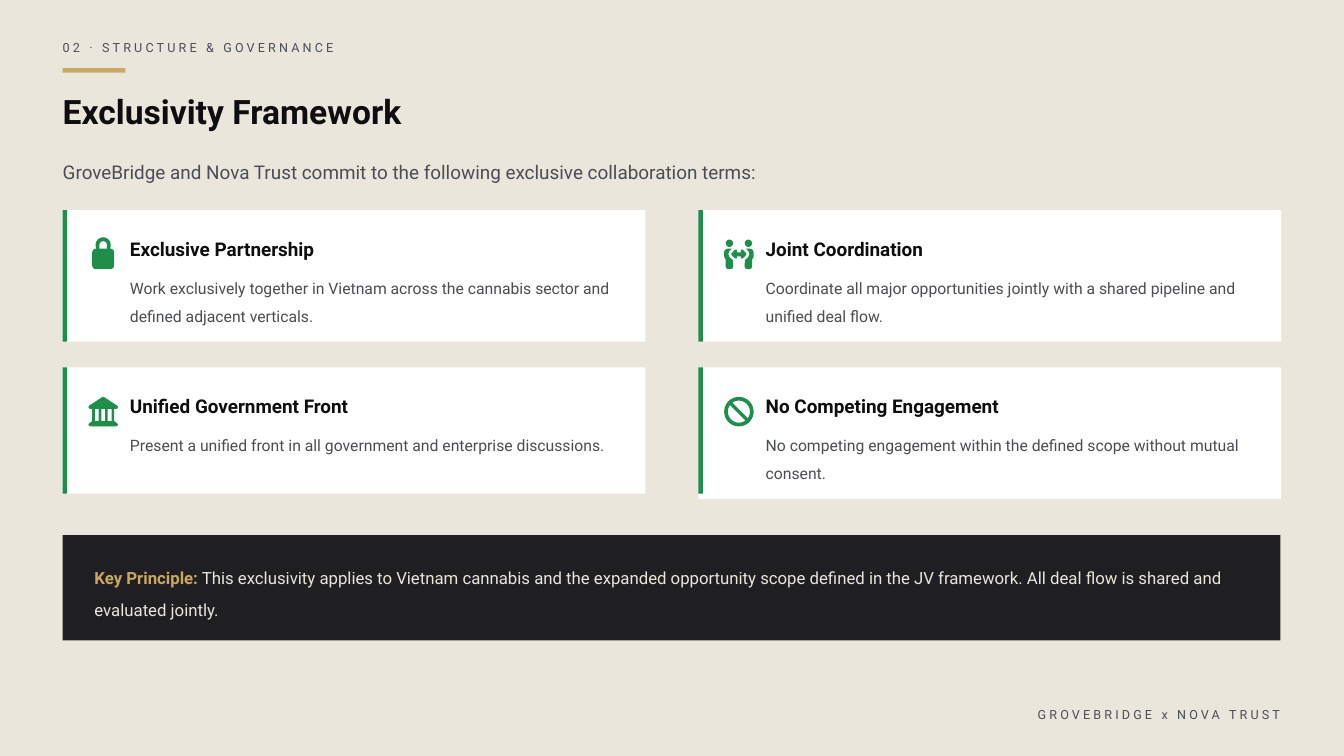
from dataclasses import dataclass
from math import cos, radians, sin

from pptx import Presentation
from pptx.dml.color import RGBColor
from pptx.enum.shapes import MSO_SHAPE
from pptx.enum.text import MSO_ANCHOR, PP_ALIGN
from pptx.util import Inches, Pt

RECT = MSO_SHAPE.RECTANGLE
TOP, MIDDLE = MSO_ANCHOR.TOP, MSO_ANCHOR.MIDDLE
LEFT, RIGHT = PP_ALIGN.LEFT, PP_ALIGN.RIGHT


@dataclass(frozen=True)
class Theme:
    font: str = "Roboto"
    sand: str = "EAE6DC"
    gold: str = "C9A961"
    green: str = "1F8E4A"
    ink: str = "0E0E10"
    gray: str = "4A4D54"
    dark: str = "1F1F22"
    white: str = "FFFFFF"
    label: int = 12
    body: int = 15
    note: int = 16
    lead: int = 18
    title: int = 32


THEME = Theme()
EDGE = 0.83
COLS = (EDGE, 9.24)
ROWS = (2.78, 4.86)
ICON = 39  # icon grid, in hundredths of an inch


def paint(shape, color):
    shape.shadow.inherit = False
    shape.fill.solid()
    shape.fill.fore_color.rgb = RGBColor.from_string(color)
    shape.line.fill.background()


def block(slide, x, y, w, h, color):
    paint(slide.shapes.add_shape(RECT, Inches(x), Inches(y), Inches(w), Inches(h)), color)


def text(slide, box, runs, size, lines=None, anchor=MIDDLE, wrap=False, align=LEFT, track=0):
    """Add a one-paragraph box; runs are (words, color, bold)."""
    frame = slide.shapes.add_textbox(*map(Inches, box)).text_frame
    frame.margin_left = frame.margin_right = frame.margin_top = frame.margin_bottom = 0
    frame.word_wrap = wrap
    frame.vertical_anchor = anchor
    para = frame.paragraphs[0]
    para.alignment = align
    if lines:
        para.line_spacing = lines
    for words, color, bold in runs:
        run = para.add_run()
        run.text = words
        font = run.font
        font.name, font.size, font.bold = THEME.font, Pt(size), bold
        font.color.rgb = RGBColor.from_string(color)
        if track:
            font._element.set("spc", str(track * 100))


def arc(x, y, r, start, end):
    """Points along an arc, clockwise, in degrees."""
    count = max(6, round((end - start) / 10))
    turns = [radians(start + (end - start) * i / count) for i in range(count + 1)]
    return [(x + r * cos(t), y + r * sin(t)) for t in turns]


def flip(points):
    return [(ICON - x, y) for x, y in reversed(points)]


def both(points):
    """Join a left half to its mirror image."""
    return points + flip(points)


def lock():
    body = (arc(19.5, 7, 10, 180, 360) + arc(29, 17, 5, 270, 360)
            + arc(29, 34, 5, 0, 90) + arc(10, 34, 5, 90, 180) + arc(10, 17, 5, 180, 270))
    hole = arc(19.5, 7, 5, 180, 360) + [(24.5, 12), (14.5, 12)]
    return [body, hole]


def people():
    head = arc(7, 4.75, 4.75, 0, 360)
    body = (arc(5, 17, 5, 180, 270) + [(10, 12), (7, 15), (5.5, 19), (7, 23), (11.5, 27)]
            + arc(8, 35, 4, 0, 90) + arc(6, 35, 4, 90, 180) + [(2, 26), (0.5, 24), (0, 22)])
    arrow = both([(17, 22), (17, 23.5), (16, 25), (14, 24.5), (10, 20.5),
                  (9.5, 19), (10, 18), (14, 13.5), (16, 13), (17, 14.5), (17, 17)])
    return [head, flip(head), body, flip(body), arrow]


def bank():
    front = both([(3, 39), (0.5, 38), (0, 36.5), (1, 35), (5, 32), (5, 16), (2.5, 16),
                  (0.5, 15), (0, 13.5), (1, 11.5), (18, 0.5), (19.5, 0)])
    gaps = [[(x, 16), (x + 5, 16), (x + 5, 32), (x, 32)] for x in (8.5, 17, 25.5)]
    return [front, *gaps]


def ban():
    mid = ICON / 2
    moons = [arc(mid, mid, 14.6, a, a + 163) for a in (53.5, 233.5)]
    return [arc(mid, mid, mid, 0, 360), *moons]


def icon(slide, x, y, loops):
    grid = [[(round(a * 100), round(b * 100)) for a, b in loop] for loop in loops]
    pen = slide.shapes.build_freeform(*grid[0][0], scale=Inches(1) / 10000)
    pen.add_line_segments(grid[0][1:], close=True)
    for loop in grid[1:]:
        pen.move_to(*loop[0])
        pen.add_line_segments(loop[1:], close=True)
    paint(pen.convert_to_shape(Inches(x), Inches(y)), THEME.green)


def card(slide, x, y, loops, name, words, high, bar):
    block(slide, x, y, 7.71, high, THEME.white)
    block(slide, x, y, 0.06, bar, THEME.green)
    icon(slide, x + 0.34, y + 0.39, loops)
    left = x + 0.89
    text(slide, (left, y + 0.3, 6.53, 0.42), [(name, THEME.ink, True)], THEME.lead)
    text(slide, (left, y + 0.78, 6.53, 0.9), [(words, THEME.gray, False)], THEME.body,
         lines=1.5, anchor=TOP, wrap=True)


def header(slide):
    text(slide, (EDGE, 0.49, 4.17, 0.28), [("02 · STRUCTURE & GOVERNANCE", THEME.gray, False)],
         THEME.label, track=3)
    block(slide, EDGE, 0.9, 0.83, 0.06, THEME.gold)
    text(slide, (EDGE, 1.11, 8.33, 0.62), [("Exclusivity Framework", THEME.ink, True)],
         THEME.title, lines=1.2)
    lead = "GroveBridge and Nova Trust commit to the following exclusive collaboration terms:"
    text(slide, (EDGE, 1.94, 9.72, 0.49), [(lead, THEME.gray, False)], THEME.lead, lines=1.6)


def footer(slide):
    block(slide, EDGE, 7.08, 16.11, 1.39, THEME.dark)
    rule = (" This exclusivity applies to Vietnam cannabis and the expanded opportunity scope "
            "defined in the JV framework. All deal flow is shared and evaluated jointly.")
    text(slide, (1.25, 7.29, 15.28, 0.97),
         [("Key Principle:", THEME.gold, True), (rule, THEME.sand, False)],
         THEME.note, lines=1.6, wrap=True)
    text(slide, (12.36, 9.31, 4.58, 0.28), [("GROVEBRIDGE x NOVA TRUST", THEME.gray, False)],
         THEME.label, align=RIGHT, track=3)


def main():
    deck = Presentation()
    deck.slide_width, deck.slide_height = Inches(17.78), Inches(10)
    slide = deck.slides.add_slide(deck.slide_layouts[6])
    slide.background.fill.solid()
    slide.background.fill.fore_color.rgb = RGBColor.from_string(THEME.sand)
    header(slide)
    cards = [
        (lock(), "Exclusive Partnership", "Work exclusively together in Vietnam across the "
         "cannabis sector and defined adjacent verticals.", 1.74, 1.74),
        (people(), "Joint Coordination", "Coordinate all major opportunities jointly with a "
         "shared pipeline and unified deal flow.", 1.74, 1.74),
        (bank(), "Unified Government Front", "Present a unified front in all government and "
         "enterprise discussions.", 1.67, 1.67),
        (ban(), "No Competing Engagement", "No competing engagement within the defined scope "
         "without mutual consent.", 1.74, 1.67),
    ]
    for i, item in enumerate(cards):
        card(slide, COLS[i % 2], ROWS[i // 2], *item)
    footer(slide)
    deck.save("out.pptx")


if __name__ == "__main__":
    main()
